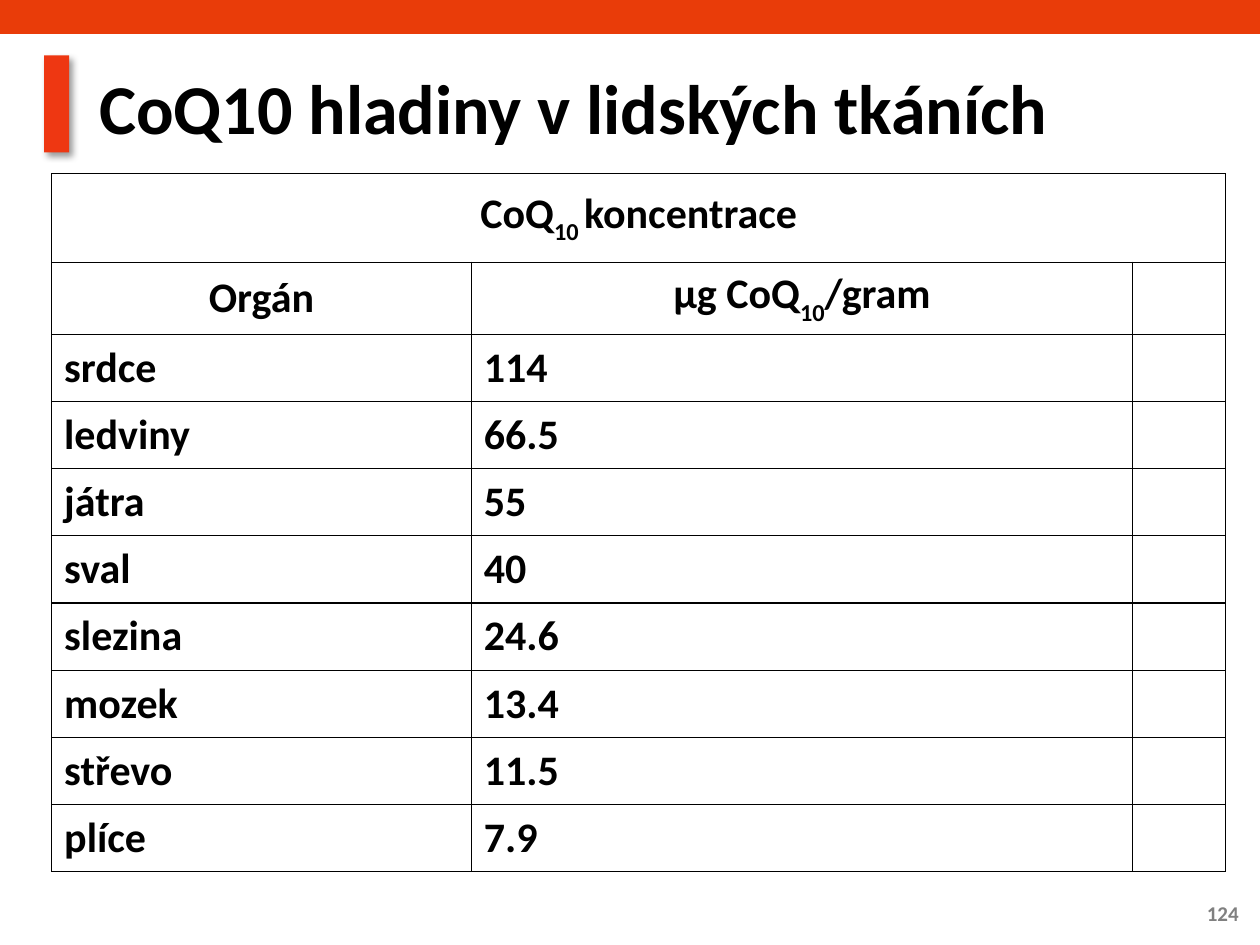
from lxml import etree
from pptx import Presentation
from pptx.dml.color import RGBColor
from pptx.enum.shapes import MSO_SHAPE
from pptx.enum.text import MSO_ANCHOR, PP_ALIGN
from pptx.oxml import parse_xml
from pptx.util import Inches, Pt

NS = "http://schemas.openxmlformats.org/drawingml/2006/main"
RECT = MSO_SHAPE.RECTANGLE
MIDDLE = MSO_ANCHOR.MIDDLE
LEFT, CENTER, RIGHT = PP_ALIGN.LEFT, PP_ALIGN.CENTER, PP_ALIGN.RIGHT

BLACK = RGBColor(0x00, 0x00, 0x00)
GRAY = RGBColor(0x80, 0x80, 0x80)
BAND = RGBColor(0xE9, 0x3C, 0x09)
ACCENT = RGBColor(0xEE, 0x37, 0x12)

# Content: a text is a list of (words, baseline percent) runs
TITLE = "CoQ10 hladiny v lidských tkáních"
PAGE = "124"
TABLE_TITLE = [("CoQ", 0), ("10 ", -30), ("koncentrace", 0)]
HEADERS = [[("Orgán", 0)], [("µg CoQ", 0), ("10", -30), ("/gram", 0)]]
LEVELS = [
    ("srdce", "114"),
    ("ledviny", "66.5"),
    ("játra", "55"),
    ("sval", "40"),
    ("slezina", "24.6"),
    ("mozek", "13.4"),
    ("střevo", "11.5"),
    ("plíce", "7.9"),
]

# Table measures in inches
COLS = [3.33, 5.25, 0.74]
TABLE_HEIGHT = 5.54
HEAD_ROWS = [0.7, 0.57]
BODY_ROW = (TABLE_HEIGHT - sum(HEAD_ROWS)) / len(LEVELS)
ROWS = HEAD_ROWS + [BODY_ROW] * len(LEVELS)


def write(tf, runs, size=24, color=BLACK, align=LEFT, hanging=0, spacing=None):
    p = tf.paragraphs[0]
    p.alignment = align
    if spacing:
        p.line_spacing = spacing
    if hanging:
        pPr = p._p.get_or_add_pPr()
        pPr.set("marL", str(Inches(hanging)))
        pPr.set("indent", str(-Inches(hanging)))
    for words, baseline in runs:
        r = p.add_run()
        r.text = words
        r.font.name = "Calibri"
        r.font.size = Pt(size)
        r.font.bold = True
        r.font.color.rgb = color
        if baseline:
            r._r.get_or_add_rPr().set("baseline", str(baseline * 1000))


def add_text(s, box, words, **fmt):
    tf = s.shapes.add_textbox(*map(Inches, box)).text_frame
    tf.word_wrap = True
    tf.vertical_anchor = MIDDLE
    write(tf, [(words, 0)], **fmt)


def add_bar(s, box, color):
    sp = s.shapes.add_shape(RECT, *map(Inches, box))
    sp.shadow.inherit = False
    sp.fill.solid()
    sp.fill.fore_color.rgb = color
    sp.line.fill.background()
    return sp


def add_shadow(sp):
    effects = sp._element.spPr.find(f"{{{NS}}}effectLst")
    effects.append(parse_xml(
        f'<a:outerShdw xmlns:a="{NS}" blurRad="{Pt(4)}" dist="{Pt(3)}" dir="2700000" '
        'algn="tl" rotWithShape="0"><a:srgbClr val="000000">'
        '<a:alpha val="40000"/></a:srgbClr></a:outerShdw>'))


def add_borders(cell):
    tcPr = cell._tc.get_or_add_tcPr()
    for i, side in enumerate(("lnL", "lnR", "lnT", "lnB")):
        ln = etree.Element(f"{{{NS}}}{side}", w=str(Pt(0.75)))
        fill = etree.SubElement(ln, f"{{{NS}}}solidFill")
        etree.SubElement(fill, f"{{{NS}}}srgbClr", val=str(BLACK))
        tcPr.insert(i, ln)


def add_level_table(s):
    table = s.shapes.add_table(len(ROWS), len(COLS), Inches(0.41), Inches(1.38),
                               Inches(sum(COLS)), Inches(TABLE_HEIGHT)).table
    table.first_row = table.horz_banding = False
    for column, width in zip(table.columns, COLS):
        column.width = Inches(width)
    for row, height in zip(table.rows, ROWS):
        row.height = Inches(height)
        for cell in row.cells:
            cell.fill.background()
            cell.vertical_anchor = MIDDLE
            add_borders(cell)
    table.cell(0, 0).merge(table.cell(0, len(COLS) - 1))

    body = [[[(words, 0)] for words in level] for level in LEVELS]
    for i, row in enumerate([[TABLE_TITLE], HEADERS] + body):
        align = CENTER if i < len(HEAD_ROWS) else LEFT
        for j, runs in enumerate(row):
            write(table.cell(i, j).text_frame, runs, align=align, hanging=0.38)


prs = Presentation()
prs.slide_width, prs.slide_height = Inches(10), Inches(7.5)
s = prs.slides.add_slide(prs.slide_layouts[6])

# Top band and title marker
add_bar(s, (0, 0, 10, 0.27), BAND)
add_shadow(add_bar(s, (0.35, 0.44, 0.2, 0.77), ACCENT))

# Page number, title and table
add_text(s, (9.25, 7.05, 0.68, 0.4), PAGE, size=12, color=GRAY, align=RIGHT)
add_text(s, (0.69, 0.4, 9.05, 0.98), TITLE, size=40, spacing=0.9)
add_level_table(s)

prs.save("out.pptx")
